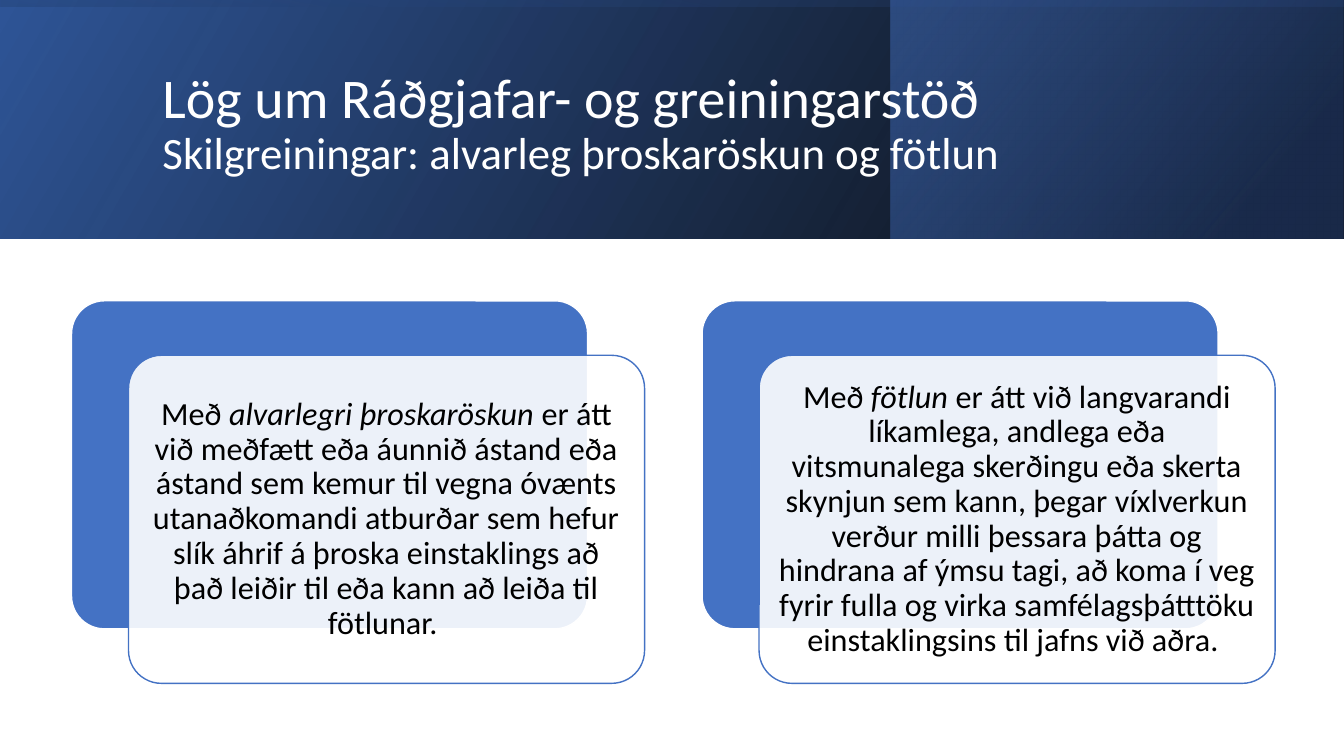
from typing import NamedTuple

from pptx import Presentation
from pptx.dml.color import ColorFormat, RGBColor
from pptx.enum.shapes import MSO_SHAPE as Kind
from pptx.enum.text import MSO_ANCHOR as Anchor, PP_ALIGN as Align
from pptx.oxml.ns import qn
from pptx.util import Pt

WIDE, HIGH = 960, 540
BAND = 170.64
BLUE = "4472C4"
BOX_W, BOX_H = 368.6, 234.3
SHIFT_X, SHIFT_Y = 40.7, 38.9
PAD = 6.85


class Stop(NamedTuple):
    place: float
    color: str
    alpha: int


class Panel(NamedTuple):
    """A banner layer with a two-stop gradient, mirrored left to right."""
    box: tuple[float, float, float, float]
    stops: tuple[Stop, Stop]
    angle: float
    turn: float = 0


class Card(NamedTuple):
    left: float
    term: str
    rest: str


PANELS = [
    Panel((0, 0, WIDE, BAND),
          (Stop(0, "000000", 96), Stop(1, "2F5597", 100)), 30),
    Panel((636.5, 0, 322.8, BAND),
          (Stop(0.19, "203864", 68), Stop(1, BLUE, 48)), 40),
    Panel(((WIDE - BAND) / 2, (BAND - WIDE) / 2, BAND, WIDE),
          (Stop(0.23, "2F5597", 16), Stop(0.99, "000000", 45)), 10, 270),
]

CARDS = [
    Card(51.1, "alvarlegri þroskaröskun",
         " er átt við meðfætt eða áunnið ástand eða ástand sem kemur til vegna "
         "óvænts utanaðkomandi atburðar sem hefur slík áhrif á þroska "
         "einstaklings að það leiðir til eða kann að leiða til fötlunar. "),
    Card(501.5, "fötlun",
         " er átt við langvarandi líkamlega, andlega eða vitsmunalega skerðingu "
         "eða skerta skynjun sem kann, þegar víxlverkun verður milli þessara "
         "þátta og hindrana af ýmsu tagi, að koma í veg fyrir fulla og virka "
         "samfélagsþátttöku einstaklingsins til jafns við aðra. "),
]


def tint(color: ColorFormat, code: str, alpha: int = 100) -> None:
    """Set a colour from its hex code, with opacity in percent."""
    color.rgb = RGBColor.from_string(code)
    if alpha < 100:
        node = color._color._xClr
        node.append(node.makeelement(qn("a:alpha"), {"val": str(alpha * 1000)}))


def add_panel(shapes, panel: Panel) -> None:
    shape = shapes.add_shape(Kind.RECTANGLE, *map(Pt, panel.box))
    shape.shadow.inherit = False
    shape.line.fill.background()
    shape.rotation = panel.turn
    shape._element.spPr.xfrm.set("flipH", "1")
    shape.fill.gradient()
    shape.fill.gradient_angle = panel.angle
    for mark, stop in zip(shape.fill.gradient_stops, panel.stops):
        mark.position = stop.place
        tint(mark.color, stop.color, stop.alpha)


def add_plate(shapes, left: float, top: float, fill: str, line: str,
              alpha: int = 100) -> None:
    shape = shapes.add_shape(Kind.ROUNDED_RECTANGLE,
                             *map(Pt, (left, top, BOX_W, BOX_H)))
    shape.adjustments[0] = 0.1
    shape.shadow.inherit = False
    shape.fill.solid()
    tint(shape.fill.fore_color, fill, alpha)
    tint(shape.line.color, line)
    shape.line.width = Pt(1)


def add_text(shapes, box: tuple, runs: list[tuple], *, color: str,
             align: Align = Align.LEFT) -> None:
    """Add one paragraph of (text, size, italic) runs; a bare break is None."""
    frame = shapes.add_textbox(*map(Pt, box)).text_frame
    frame.word_wrap = True
    frame.vertical_anchor = Anchor.MIDDLE
    para = frame.paragraphs[0]
    para.alignment = align
    para.line_spacing = 0.9
    for item in runs:
        if item is None:
            para.add_line_break()
            continue
        run = para.add_run()
        run.text, size, run.font.italic = item
        run.font.size = Pt(size)
        run.font.name = "Calibri"
        tint(run.font.color, color)


def add_card(shapes, card: Card, top: float) -> None:
    left, low = card.left + SHIFT_X, top + SHIFT_Y
    add_plate(shapes, card.left, top, BLUE, "FFFFFF")
    add_plate(shapes, left, low, "FFFFFF", BLUE, 90)
    add_text(shapes,
             (left + PAD, low + PAD, BOX_W - 2 * PAD, BOX_H - 2 * PAD),
             [("Með ", 23, False), (card.term, 23, True), (card.rest, 23, False)],
             color="000000", align=Align.CENTER)


def main() -> None:
    deck = Presentation()
    deck.slide_width, deck.slide_height = Pt(WIDE), Pt(HIGH)
    shapes = deck.slides.add_slide(deck.slide_layouts[6]).shapes
    for panel in PANELS:
        add_panel(shapes, panel)
    add_text(shapes, (109, 27.4, 765.4, 123.8),
             [("Lög um Ráðgjafar- og greiningarstöð", 40, False), None,
              ("Skilgreiningar: alvarleg þroskaröskun og fötlun", 32, False)],
             color="FFFFFF")
    group = shapes.add_group_shape().shapes
    for card in CARDS:
        add_card(group, card, 214.9)
    deck.save("out.pptx")


if __name__ == "__main__":
    main()
